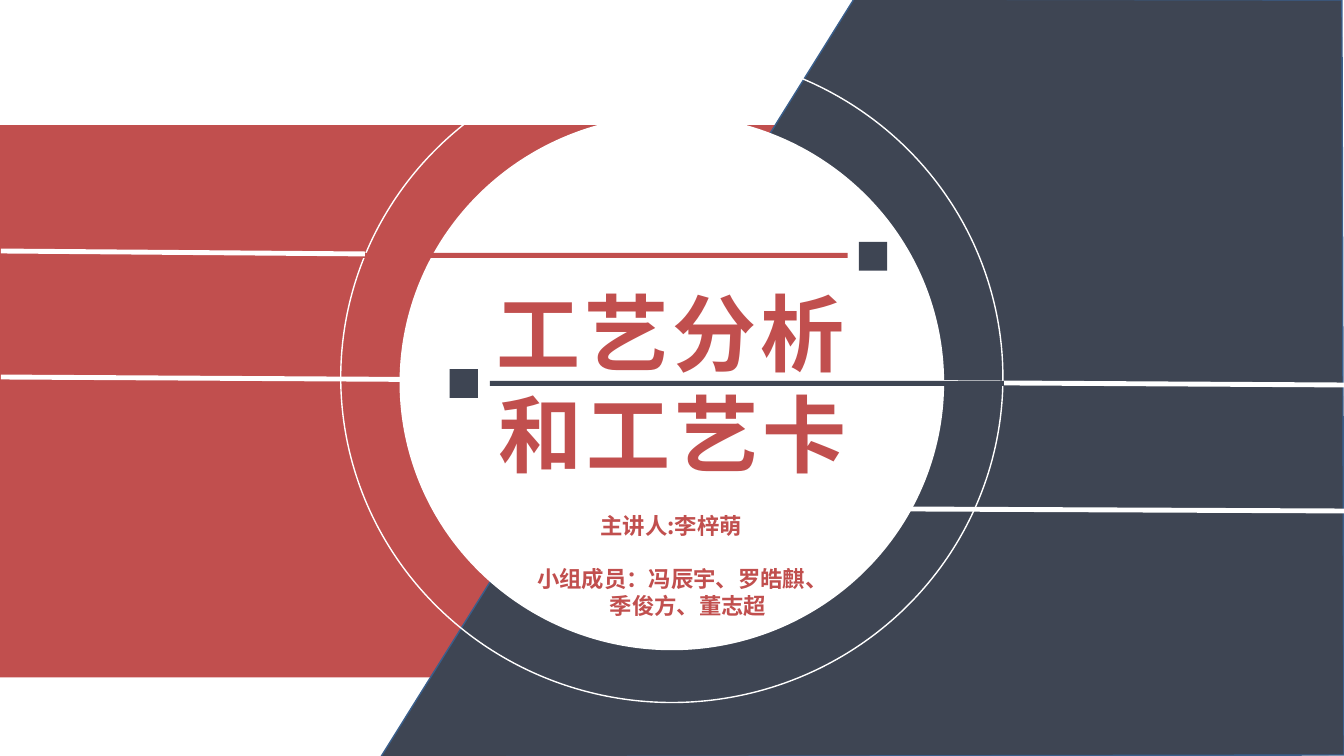
from pptx import Presentation
from pptx import util as u
from pptx.dml.color import RGBColor
from pptx.enum import shapes, text
from pptx.oxml.ns import qn
from lxml import etree

Pt = u.Pt
RED = RGBColor(0xC1, 0x4F, 0x4E)
SLATE = RGBColor(0x3E, 0x45, 0x53)
EDGE_BLUE = RGBColor(0x3A, 0x5F, 0x8C)
WHITE = RGBColor(0xFF, 0xFF, 0xFF)
FONT = "Noto Sans CJK SC"
WIDTH, HEIGHT = 960, 540


def style(shape, fill=None, line=None):
    shape.shadow.inherit = False
    if fill is None:
        shape.fill.background()
    else:
        shape.fill.solid()
        shape.fill.fore_color.rgb = fill
    if line is None:
        shape.line.fill.background()
    else:
        shape.line.color.rgb = line
        shape.line.width = Pt(1)


def add_shape(page, kind, box, fill=None, line=None):
    shape = page.shapes.add_shape(kind, *(Pt(length) for length in box))
    style(shape, fill, line)


def add_rule(page, x1, y1, x2, y2):
    rule = page.shapes.add_connector(
        shapes.MSO_CONNECTOR.STRAIGHT, Pt(x1), Pt(y1), Pt(x2), Pt(y2))
    rule.line.color.rgb = WHITE
    rule.line.width = Pt(3.5)
    etree.SubElement(rule._element.spPr, qn("a:effectLst"))


def fill_placeholder(page, holder, box, lines, size, pitch, top_inset):
    """Move a placeholder to the front, place it and set its lines."""
    page.shapes._spTree.append(holder._element)
    holder.left, holder.top, holder.width, holder.height = map(Pt, box)
    frame = holder.text_frame
    frame.text = "\n".join(lines)
    frame.word_wrap = True
    frame.auto_size = text.MSO_AUTO_SIZE.NONE
    frame.vertical_anchor = text.MSO_ANCHOR.TOP
    frame.margin_left = frame.margin_right = Pt(7.2)
    frame.margin_top, frame.margin_bottom = Pt(top_inset), Pt(0)
    for para in frame.paragraphs:
        para.alignment = text.PP_ALIGN.CENTER
        para.line_spacing = Pt(pitch)
        para.space_before = para.space_after = Pt(0)
        for span in para.runs:
            font = span.font
            font.size, font.bold, font.name = Pt(size), True, FONT
            font.color.rgb = RED
            etree.SubElement(font._element, qn("a:ea")).set("typeface", FONT)
    return frame


def draw_backdrop(page, box):
    left, top, width, height = box
    # Red band on the left
    add_shape(page, shapes.MSO_SHAPE.RECTANGLE,
              (left, top + 89.3, 907.2, 394.6), RED)
    # Slanted slate panel on the right
    right, bottom = left + width, top + height
    builder = page.shapes.build_freeform(
        Pt(left + 610), Pt(top - 0.7), scale=1.0)
    corners = [(right - 1.5, top), (right, bottom - 0.7), (left + 272, bottom + 0.7)]
    builder.add_line_segments([(Pt(x), Pt(y)) for x, y in corners], close=True)
    style(builder.convert_to_shape(), SLATE, EDGE_BLUE)


def draw_medallion(page, box):
    left, top, width, height = box
    # White disc inside a thin ring
    add_shape(page, shapes.MSO_SHAPE.OVAL,
              (left + 42, top + 44.7, width - 84, height - 82), WHITE)
    add_shape(page, shapes.MSO_SHAPE.OVAL, box, line=WHITE)


def draw_credits(page, box):
    lines = ["主讲人:李梓萌", "小组成员：冯辰宇、罗皓麒、", "季俊方、董志超"]
    frame = fill_placeholder(page, page.placeholders[1], box, lines, 16, 19, 5.3)
    frame.paragraphs[1].space_before = Pt(19)
    # Set the last line slightly to the right
    frame.paragraphs[2]._p.get_or_add_pPr().set("marL", str(Pt(24)))


def draw_title(page, box):
    left, top, width, height = box
    # White rules behind the title
    add_rule(page, 0.7, top + 80.7, WIDTH, top + 86.4)
    add_rule(page, 504, top + 174.3, WIDTH, top + 176.4)
    frame = fill_placeholder(
        page, page.shapes.title, box, ["工艺分析和工艺卡"], 60, 72, 12.5)
    for span in frame.paragraphs[0].runs:
        span.font._element.set("spc", "300")
    # Square markers and the bars they end
    for x, y in ((left + 278, top - 15.8), (left - 14.4, top + 75)):
        add_shape(page, shapes.MSO_SHAPE.RECTANGLE, (x, y, 20.2, 20.6), SLATE)
    for x, y, length, colour in ((left - 95.8, top - 7.9, 365.8, RED),
                                 (left + 14.4, top + 83.5, 367.2, SLATE)):
        add_shape(page, shapes.MSO_SHAPE.RECTANGLE, (x, y, length, 3.6), colour)
    add_rule(page, 0.7, top - 9.3, 260.6, top - 7.2)


def main():
    deck = Presentation()
    deck.slide_width, deck.slide_height = Pt(WIDTH), Pt(HEIGHT)
    page = deck.slides.add_slide(deck.slide_layouts[0])
    page.background.fill.solid()
    page.background.fill.fore_color.rgb = WHITE
    draw_backdrop(page, (0, 0, WIDTH, HEIGHT))
    draw_medallion(page, (243.4, 37.4, 473, 464.4))
    draw_credits(page, (371.5, 360.7, 216, 85))
    draw_title(page, (335.5, 188.6, 290.2, 152.6))
    deck.save("out.pptx")


if __name__ == "__main__":
    main()
